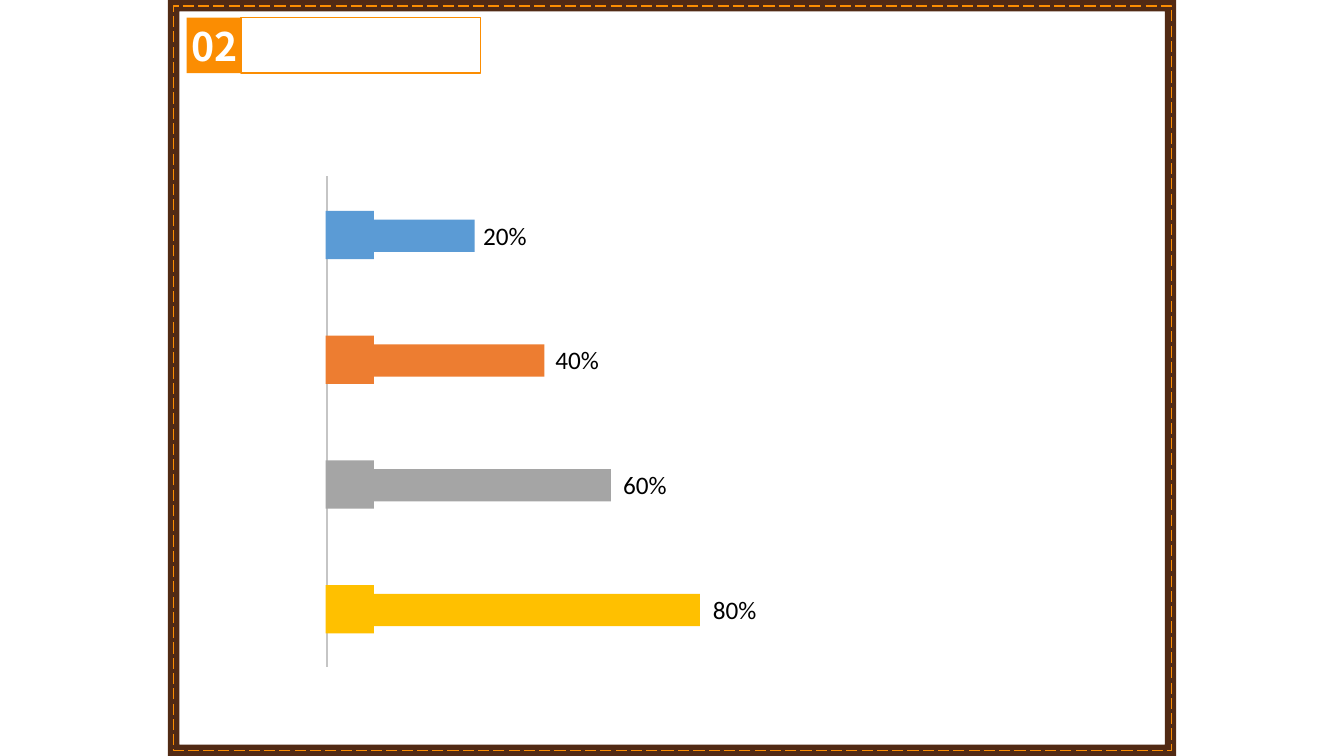
from pptx import Presentation
from pptx.dml.color import RGBColor as Rgb
from pptx.enum.dml import MSO_LINE as Dash
from pptx.enum.shapes import MSO_CONNECTOR as Link, MSO_SHAPE as Form
from pptx.enum.text import MSO_ANCHOR as Anchor, MSO_AUTO_SIZE as Fit, PP_ALIGN as Align
from pptx.oxml.ns import qn
from pptx.util import Inches, Pt
from lxml.etree import SubElement as Sub

BROWN = Rgb(0x51, 0x2A, 0x14)
AMBER = Rgb(0xFB, 0x8D, 0x02)
SILVER = Rgb(0xC5, 0xC5, 0xC5)
BLUE = Rgb(0x5B, 0x9B, 0xD5)
RUST = Rgb(0xED, 0x7D, 0x31)
GRAY = Rgb(0xA5, 0xA5, 0xA5)
GOLD = Rgb(0xFF, 0xC0, 0x00)
WHITE = Rgb(0xFF, 0xFF, 0xFF)
BLACK = Rgb(0, 0, 0)

ROWS = 90
TOP, STEP = 25.1, 14.85
LEFT, SIDE = 38.75, 5.75
START, THICK = 44.4, 3.85
BARS = [
    ("20%", BLUE, 12.1, 57.5),
    ("40%", RUST, 20.4, 66.1),
    ("60%", GRAY, 28.3, 74.15),
    ("80%", GOLD, 38.9, 84.85),
]


class Board:
    """Draws styled elements on a slide divided into square grid cells."""

    def __init__(self, deck):
        self.slide = deck.slides.add_slide(deck.slide_layouts[5])
        self.shapes = self.slide.shapes
        self.cell = deck.slide_height / ROWS
        self.frame = dict(word_wrap=True, auto_size=Fit.NONE,
                          vertical_anchor=Anchor.MIDDLE, margin_left=0,
                          margin_top=0, margin_right=0, margin_bottom=0)

    def grid(self, *cells):
        return [round(n * self.cell) for n in cells]

    def paint(self, shape, fill):
        shape.fill.solid()
        shape.fill.fore_color.rgb = fill

    def box(self, area, fill=None, line=None, dash=None, form=Form.RECTANGLE):
        shape = self.shapes.add_shape(form, *self.grid(*area))
        shape.shadow.inherit = False
        if fill is None:
            shape.fill.background()
        else:
            self.paint(shape, fill)
        if line is None:
            shape.line.fill.background()
        else:
            shape.line.color.rgb = line
            shape.line.width = Pt(1)
            shape.line.dash_style = dash
        return shape

    def rule(self, ends, color, width):
        line = self.shapes.add_connector(Link.STRAIGHT, *self.grid(*ends))
        line.line.color.rgb = color
        line.line.width = Pt(width)
        Sub(line._element.spPr, qn("a:effectLst"))

    def put(self, shape, text, align, color, **font):
        frame = shape.text_frame
        frame.text = text
        for key, value in self.frame.items():
            setattr(frame, key, value)
        para = frame.paragraphs[0]
        para.alignment = align
        para.line_spacing = 1.0
        for key, value in font.items():
            setattr(para.runs[0].font, key, value)
        para.runs[0].font.color.rgb = color

    def title(self, area, text, fill):
        shape = self.shapes.title
        spots = zip(("left", "top", "width", "height"), self.grid(*area))
        for key, value in spots:
            setattr(shape, key, value)
        self.paint(shape, fill)
        self.put(shape, text, Align.CENTER, WHITE, name="Noto Sans CJK SC",
                 size=Pt(28), bold=True)

    def label(self, area, text):
        shape = self.shapes.add_textbox(*self.grid(*area))
        self.put(shape, text, Align.LEFT, BLACK, name="Calibri", size=Pt(18))


def main():
    deck = Presentation()
    deck.slide_width, deck.slide_height = Inches(13.33), Inches(7.5)
    board = Board(deck)
    rim = board.box((20, 0, 120, ROWS), BROWN, form=Form.FRAME)
    rim.adjustments[0] = 0.015
    board.box((20.65, 0.7, 118.8, 88.65), line=AMBER, dash=Dash.LONG_DASH)
    board.title((22.2, 2.1, 6.6, 6.6), "02", AMBER)
    board.box((28.7, 2.1, 28.5, 6.6), line=AMBER)
    board.rule((38.9, 21, 38.9, 79.4), SILVER, 1.75)
    for row, (text, color, width, x) in enumerate(BARS):
        y = TOP + row * STEP
        board.box((LEFT, y, SIDE, SIDE), color)
        board.box((START, y + 1.05, width, THICK), color)
        board.label((x, y, 14.15, SIDE), text)
    deck.save("out.pptx")


if __name__ == "__main__":
    main()
